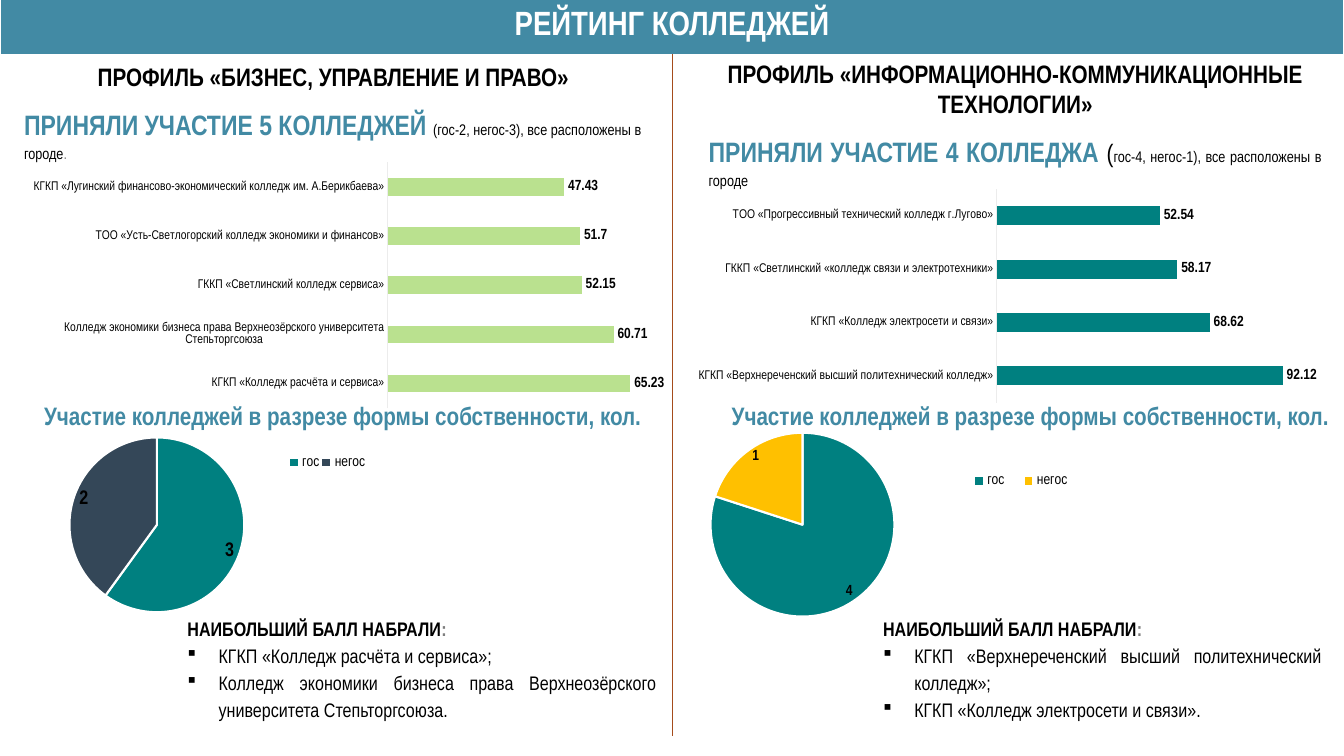
"""Slide with a college rating: two profiles, each with scores, ownership and leaders."""
from lxml import etree
from pptx import Presentation
from pptx.chart.data import CategoryChartData
from pptx.dml.color import RGBColor
from pptx.enum.chart import XL_CHART_TYPE, XL_LABEL_POSITION, XL_LEGEND_POSITION, XL_TICK_LABEL_POSITION, XL_TICK_MARK
from pptx.enum.shapes import MSO_CONNECTOR, MSO_SHAPE
from pptx.enum.text import MSO_ANCHOR, MSO_AUTO_SIZE, PP_ALIGN
from pptx.oxml.ns import qn
from pptx.util import Inches, Pt

BAR, PIE = XL_CHART_TYPE.BAR_CLUSTERED, XL_CHART_TYPE.PIE
OUT, FIT = XL_LABEL_POSITION.OUTSIDE_END, XL_LABEL_POSITION.BEST_FIT
NEAR, NONE = XL_TICK_LABEL_POSITION.NEXT_TO_AXIS, XL_TICK_MARK.NONE
BOTTOM = XL_LEGEND_POSITION.BOTTOM
LEFT, MID, JUST = PP_ALIGN.LEFT, PP_ALIGN.CENTER, PP_ALIGN.JUSTIFY
GROW, TOP = MSO_AUTO_SIZE.SHAPE_TO_FIT_TEXT, MSO_ANCHOR.TOP
FONT = "Arial Narrow"
HUES = {"blue": "428AA4", "white": "FFFFFF", "black": "000000", "grey": "7E7E7E", "lime": "BAE18F",
        "teal": "008080", "navy": "344758", "gold": "FFC000", "rust": "A54C1B", "pale": "ECECEC"}
INK = {name: RGBColor.from_string(code) for name, code in HUES.items()}

deck = Presentation()
deck.slide_width, deck.slide_height = Inches(13.33), Inches(7.5)
wide, high = deck.slide_width / 100, deck.slide_height / 100
slide = deck.slides.add_slide(deck.slide_layouts[5])
shapes = slide.shapes


def box(x, y, w, h):
    """Turn percent of the slide into lengths."""
    return int(x * wide), int(y * high), int(w * wide), int(h * high)


def write(shape, rows, wrap=True):
    """Fill a shape with rows of (align, spacing, indent, bullet, runs)."""
    frame = shape.text_frame
    frame.word_wrap, frame.auto_size, frame.vertical_anchor = wrap, GROW, TOP
    for i, (align, space, indent, mark, runs) in enumerate(rows):
        para = frame.add_paragraph() if i else frame.paragraphs[0]
        para.alignment, para.line_spacing = align, space
        props = para._p.get_or_add_pPr()
        if indent:
            props.set("marL", str(Inches(indent[0])))
            props.set("indent", str(Inches(indent[1])))
        if mark:
            etree.SubElement(props, qn("a:buFont")).set("typeface", "Wingdings")
            etree.SubElement(props, qn("a:buChar")).set("char", mark)
        for words, size, hue, bold in runs:
            run = para.add_run()
            run.text = words
            font = run.font
            font.name, font.size, font.bold = FONT, Pt(size), bold
            font.color.rgb = INK[hue]


banner = shapes.add_shape(MSO_SHAPE.RECTANGLE, *box(0, -0.93, 100, 8.13))
banner.shadow.inherit = False
banner.fill.solid()
banner.fill.fore_color.rgb = INK["blue"]
banner.line.color.rgb, banner.line.width = INK["white"], Pt(1)

title = shapes.title
title.element.addprevious(banner.element)
title.left, title.top, title.width, title.height = box(0, 0.8, 100, 4.8)
edge = title.text_frame
edge.margin_left = edge.margin_right = edge.margin_top = edge.margin_bottom = 0
write(title, [(MID, 0.9, None, None, [("РЕЙТИНГ КОЛЛЕДЖЕЙ", 24, "white", True)])])

split = shapes.add_connector(MSO_CONNECTOR.STRAIGHT, *box(50, 97.33, 50, 7.2))
split.end_connect(banner, 2)
split.line.color.rgb, split.line.width = INK["rust"], Pt(0.5)
etree.SubElement(split.element.spPr, qn("a:effectLst"))

halves = [
    {"head": "ПРОФИЛЬ «БИЗНЕС, УПРАВЛЕНИЕ И ПРАВО»", "headat": (6.53, 7.47, 37.13, 5.33), "wrap": False,
     "lead": [("ПРИНЯЛИ УЧАСТИЕ 5 КОЛЛЕДЖЕЙ ", 20, "blue", True),
              ("(гос-2, негос-3), все расположены в городе", 11, "black", False), (".", 11, "grey", False)],
     "leadat": (1.05, 12.93, 48.99, 9.33), "align": LEFT,
     "charts": [
         (BAR, (1.95, 20.8, 47.49, 33.87), (0.57, 0.02, 0.41, 0.96), 70, 10.5, ["lime"],
          [("КГКП «Колледж расчёта и сервиса»", 65.23),
           ("Колледж экономики бизнеса права Верхнеозёрского университета Степьторгсоюза", 60.71),
           ("ГККП «Светлинский колледж сервиса»", 52.15),
           ("ТОО «Усть-Светлогорский колледж экономики и финансов»", 51.7),
           ("КГКП «Лугинский финансово-экономический колледж им. А.Берикбаева»", 47.43)]),
         (PIE, (-4.35, 56, 31.73, 30.53), (0.3, 0.06, 0.41, 0.76), (0.81, 0.12, 0.19, 0.1), 14,
          ["teal", "navy"], [("гос", 3), ("негос", 2)])],
     "subat": (2.1, 52.27, 46.81, 5.33), "bestat": (9.53, 80.53, 40.06, 15.73),
     "best": ["КГКП «Колледж расчёта и сервиса»;",
              "Колледж экономики бизнеса права Верхнеозёрского университета Степьторгсоюза."]},
    {"head": "ПРОФИЛЬ «ИНФОРМАЦИОННО-КОММУНИКАЦИОННЫЕ ТЕХНОЛОГИИ»",
     "headat": (51.09, 7.07, 48.91, 9.47), "wrap": True,
     "lead": [("ПРИНЯЛИ УЧАСТИЕ 4 КОЛЛЕДЖА ", 20, "blue", True), ("(", 18, "black", False),
              ("гос-4, негос-1), все расположены в городе", 11, "black", False)],
     "leadat": (51.99, 16.53, 47.11, 9.33), "align": JUST,
     "charts": [
         (BAR, (51.09, 24.4, 47.11, 29.47), (0.49, 0.02, 0.49, 0.96), 100, 10.5, ["teal"],
          [("КГКП «Верхнереченский высший политехнический колледж»", 92.12),
           ("КГКП «Колледж электросети и связи»", 68.62),
           ("ГККП «Светлинский «колледж связи и электротехники»", 58.17),
           ("ТОО «Прогрессивный технический колледж г.Лугово»", 52.54)]),
         (PIE, (38.03, 55.33, 43.36, 32), (0.34, 0.06, 0.32, 0.76), (0.77, 0.21, 0.21, 0.1), 10.5,
          ["teal", "gold"], [("гос", 4), ("негос", 1)])],
     "subat": (53.26, 52.27, 46.81, 5.33), "bestat": (61.29, 80.53, 37.81, 15.73),
     "best": ["КГКП «Верхнереченский высший политехнический колледж»;",
              "КГКП «Колледж электросети и связи»."]},
]

for half in halves:
    write(shapes.add_textbox(*box(*half["headat"])),
          [(MID if half["wrap"] else LEFT, 1.0, None, None, [(half["head"], 18, "black", True)])], half["wrap"])
    write(shapes.add_textbox(*box(*half["leadat"])), [(half["align"], 1.15, None, None, half["lead"])])

    for kind, spot, inner, extra, size, hues, items in half["charts"]:
        data = CategoryChartData()
        data.categories = [name for name, score in items]
        data.add_series("Series 1", [score for name, score in items])
        chart = shapes.add_chart(kind, *box(*spot), data).chart
        chart.has_title = False
        chart.has_legend = kind == PIE
        chart.font.name, chart.font.size = FONT, Pt(10)
        chart.font.color.rgb = INK["black"]
        plot = chart.plots[0]
        series = plot.series[0]
        plot.vary_by_categories = kind == PIE
        plot.has_data_labels = True
        label = plot.data_labels
        label.show_value, label.show_percentage = True, False
        label.font.name, label.font.size, label.font.bold = FONT, Pt(size), True
        label.font.color.rgb = INK["black"]
        area = chart._chartSpace.chart.plotArea
        frames = [(area, 0, inner)]
        if kind == BAR:
            label.position, plot.gap_width = OUT, 182
            series.format.fill.solid()
            series.format.fill.fore_color.rgb = INK[hues[0]]
            names, scale = chart.category_axis, chart.value_axis
            names.major_tick_mark = names.minor_tick_mark = NONE
            names.tick_label_position = NEAR
            names.tick_labels.font.size = Pt(9)
            names.format.line.color.rgb, names.format.line.width = INK["pale"], Pt(0.75)
            scale.minimum_scale, scale.maximum_scale = 0, extra
            scale.has_major_gridlines = scale.visible = False
        else:
            label.position = FIT
            for i, hue in enumerate(hues):
                part = series.points[i].format
                part.fill.solid()
                part.fill.fore_color.rgb = INK[hue]
                part.line.color.rgb, part.line.width = INK["white"], Pt(1.5)
            key = chart.legend
            key.position, key.include_in_layout = BOTTOM, False
            key.font.name, key.font.size = FONT, Pt(10.5)
            key.font.color.rgb = INK["black"]
            frames.append((key._element, 1, extra))
        for node, slot, shares in frames:
            for old in node.findall(qn("c:layout")):
                node.remove(old)
            layout = etree.Element(qn("c:layout"))
            node.insert(slot, layout)
            manual = etree.SubElement(layout, qn("c:manualLayout"))
            rules = [("xMode", "edge"), ("yMode", "edge"), *zip("xywh", shares)]
            if node is area:
                rules.insert(0, ("layoutTarget", "inner"))
            for tag, value in rules:
                etree.SubElement(manual, qn("c:" + tag)).set("val", str(value))

    write(shapes.add_textbox(*box(*half["subat"])), [
        (MID, 1.0, None, None, [("Участие колледжей в разрезе формы собственности, кол.", 18, "blue", True)])], False)
    write(shapes.add_textbox(*box(*half["bestat"])), [
        (LEFT, 1.15, (0, 0.49), None, [("НАИБОЛЬШИЙ БАЛЛ НАБРАЛИ", 14, "black", True), (":", 14, "grey", True)]),
        *[(JUST, 1.15, (0.8, -0.31), "§", [(name, 14, "black", False)]) for name in half["best"]]])

deck.save("out.pptx")
